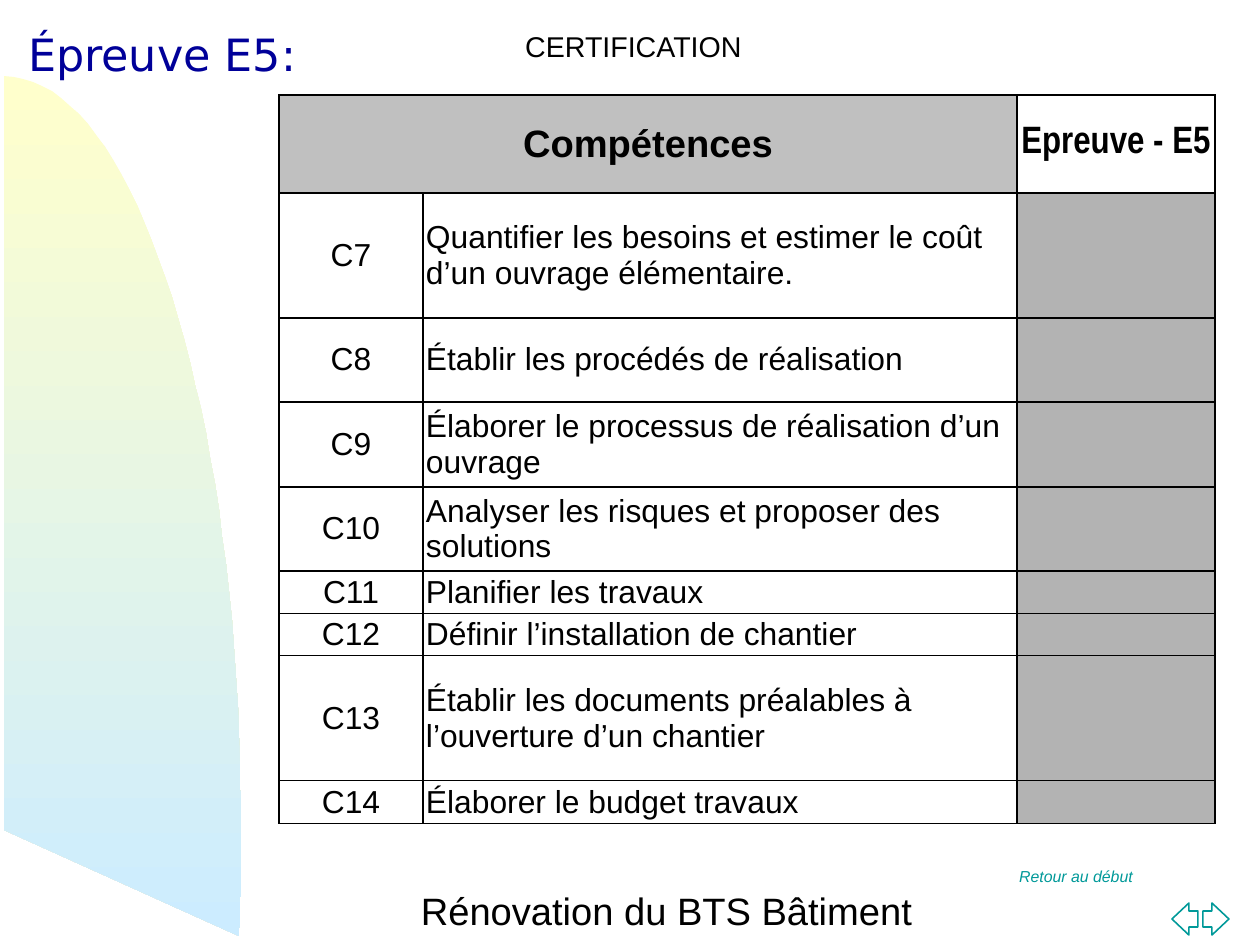
from lxml import etree
from pptx import Presentation
from pptx.dml.color import RGBColor
from pptx.enum.text import MSO_ANCHOR, PP_ALIGN
from pptx.util import Pt

PX = 8000
LEFT, MID = PP_ALIGN.LEFT, PP_ALIGN.CENTER
TOP, CENTER = MSO_ANCHOR.TOP, MSO_ANCHOR.MIDDLE
NS = "http://schemas.openxmlformats.org/drawingml/2006/main"
HUES = {"black": "000000", "white": "FFFFFF", "navy": "000099", "teal": "009999",
        "cream": "FFFFCC", "sky": "CCECFF", "head": "C0C0C0", "mark": "B3B3B3"}
INK = {name: RGBColor.from_string(code) for name, code in HUES.items()}


def write(para, text, size, hue="black", align=MID, **extra):
    para.alignment = align
    run = para.add_run()
    run.text = text
    look = {"name": "Arial", "size": Pt(size), "bold": False, **extra}
    for key, value in look.items():
        setattr(run.font, key, value)
    run.font.color.rgb = INK[hue]


def outline(points):
    pen = slide.shapes.build_freeform(*points[0], scale=PX)
    pen.add_line_segments(points[1:], close=True)
    shape = pen.convert_to_shape()
    shape.shadow.inherit = False
    return shape


deck = Presentation()
deck.slide_width, deck.slide_height = 1260 * PX, 945 * PX
slide = deck.slides.add_slide(deck.slide_layouts[6])

curves = [[(4, 76), (135, 76), (241, 414), (241, 830)],
          [(241, 830), (241, 865), (241, 901), (239, 936)]]
edge = []
for a, b, c, d in curves:
    for step in range(41):
        t = step / 40
        edge.append(tuple((1 - t) ** 3 * a[i] + 3 * t * (1 - t) ** 2 * b[i]
                          + 3 * t * t * (1 - t) * c[i] + t ** 3 * d[i] for i in (0, 1)))
sail = outline(edge + [(4, 830)])
sail.fill.gradient()
sail.fill.gradient_angle = 270
for stop, hue in zip(sail.fill.gradient_stops, ("cream", "sky")):
    stop.color.rgb = INK[hue]
sail.line.fill.background()

back = [(1198, 911), (1189, 911), (1189, 903), (1172, 919),
        (1189, 935), (1189, 927), (1198, 927)]
ahead = [(2401 - x, y) for x, y in back]
for points in (back, ahead):
    arrow = outline(points)
    arrow.fill.solid()
    arrow.fill.fore_color.rgb = INK["white"]
    arrow.line.color.rgb = INK["teal"]
    arrow.line.width = Pt(1)

labels = [
    ("Épreuve E5:", (0, 7, 324, 93), CENTER, {"size": 28, "hue": "navy", "name": "DejaVu Sans"}),
    ("CERTIFICATION", (513, 23, 241, 46), TOP, {"size": 18}),
    ("Retour au début", (1008, 861, 211, 34), TOP,
     {"size": 10, "hue": "teal", "align": LEFT, "italic": True}),
    ("Rénovation du BTS Bâtiment", (357, 882, 619, 60), TOP, {"size": 24}),
]
for text, spot, anchor, look in labels:
    frame = slide.shapes.add_textbox(*(n * PX for n in spot)).text_frame
    frame.word_wrap = True
    frame.vertical_anchor = anchor
    write(frame.paragraphs[0], text, **look)

skills = [
    ("C7", "Quantifier les besoins et estimer le coût d’un ouvrage élémentaire."),
    ("C8", "Établir les procédés de réalisation"),
    ("C9", "Élaborer le processus de réalisation d’un ouvrage"),
    ("C10", "Analyser les risques et proposer des solutions"),
    ("C11", "Planifier les travaux"),
    ("C12", "Définir l’installation de chantier"),
    ("C13", "Établir les documents préalables à l’ouverture d’un chantier"),
    ("C14", "Élaborer le budget travaux"),
]
widths = [144, 594, 198]
heights = [98, 125, 84, 85, 84, 43, 42, 125, 43]
grid = slide.shapes.add_table(len(heights), len(widths), 279 * PX, 95 * PX,
                              sum(widths) * PX, sum(heights) * PX).table
for col, width in zip(grid.columns, widths):
    col.width = width * PX
for row, height in zip(grid.rows, heights):
    row.height = height * PX

format_cell = {"margin_left": 3 * PX, "margin_right": 3 * PX, "margin_top": 0,
               "margin_bottom": 0, "vertical_anchor": CENTER}
fills = {(0, 0): "head", (0, 1): "head", (0, 2): "white"}
for r in range(len(heights)):
    for c in range(len(widths)):
        cell = grid.cell(r, c)
        for key, value in format_cell.items():
            setattr(cell, key, value)
        props = cell._tc.get_or_add_tcPr()
        for side in ("lnL", "lnR", "lnT", "lnB"):
            line = etree.SubElement(props, f"{{{NS}}}{side}", w=str(Pt(1)))
            solid = etree.SubElement(line, f"{{{NS}}}solidFill")
            etree.SubElement(solid, f"{{{NS}}}srgbClr", val=HUES["black"])
        hue = fills.get((r, c), "mark" if c == 2 else None)
        if hue:
            cell.fill.solid()
            cell.fill.fore_color.rgb = INK[hue]
        else:
            cell.fill.background()

grid.cell(0, 0).merge(grid.cell(0, 1))
write(grid.cell(0, 0).text_frame.paragraphs[0], "Compétences", 24, bold=True)
write(grid.cell(0, 2).text_frame.paragraphs[0], "Epreuve - E5", 24,
      name="Arial Narrow", bold=True)
for r, (code, skill) in enumerate(skills, 1):
    write(grid.cell(r, 0).text_frame.paragraphs[0], code, 20)
    write(grid.cell(r, 1).text_frame.paragraphs[0], skill, 20, align=LEFT)

deck.save("out.pptx")
